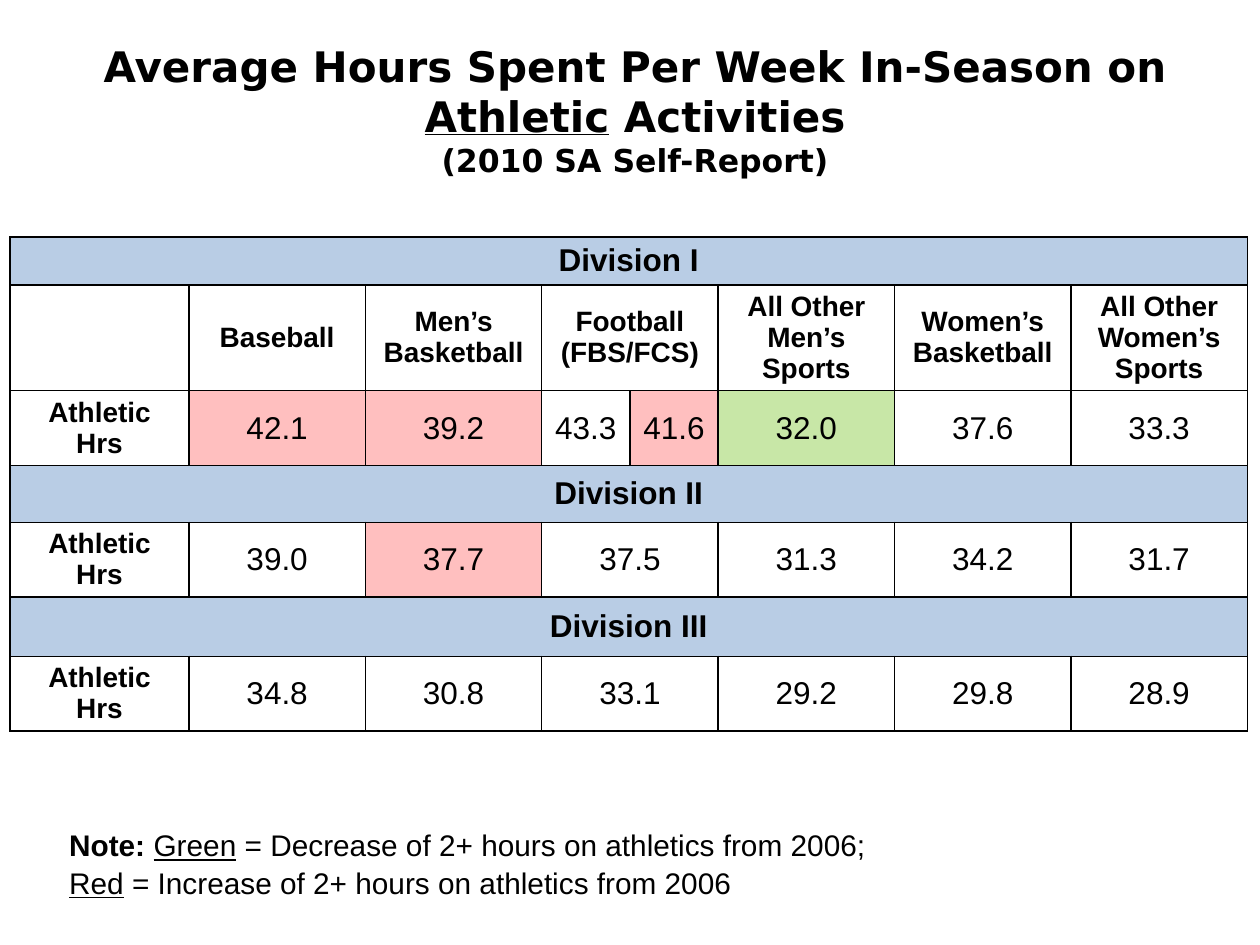
from dataclasses import dataclass

from lxml import etree
from pptx import Presentation
from pptx.dml.color import RGBColor
from pptx.enum.text import MSO_ANCHOR, MSO_AUTO_SIZE, PP_ALIGN
from pptx.oxml.ns import qn
from pptx.util import Inches, Pt

CENTER = PP_ALIGN.CENTER
LEFT = PP_ALIGN.LEFT
MIDDLE = MSO_ANCHOR.MIDDLE
TOP = MSO_ANCHOR.TOP
NO_AUTOSIZE = MSO_AUTO_SIZE.NONE


@dataclass(frozen=True)
class Theme:
    title_font: str = "DejaVu Sans"
    body_font: str = "Arial"
    ink: str = "000000"
    paper: str = "FFFFFF"
    band: str = "B9CDE5"
    increase: str = "FF0000"
    decrease: str = "92D050"
    title_size: int = 24
    value_size: int = 18
    label_size: int = 16
    note_size: int = 17
    border: int = 1


THEME = Theme()
FILLS = {
    "plain": (THEME.paper, 100),
    "band": (THEME.band, 100),
    "red": (THEME.increase, 25),
    "green": (THEME.decrease, 50),
}

TITLE = [[
    ("Average Hours Spent Per Week In-Season on\v", {}),
    ("Athletic", {"underline": True}),
    (" Activities\v", {}),
    ("(2010 SA Self-Report)", {"size": Pt(THEME.value_size)}),
]]
NOTE = [
    [
        ("Note: ", {"bold": True}),
        ("Green", {"underline": True}),
        (" = Decrease of 2+ hours on athletics from 2006;", {}),
    ],
    [
        ("Red", {"underline": True}),
        (" = Increase of 2+ hours on athletics from 2006", {}),
    ],
]

SPORTS = ["", "Baseball", "Men’s Basketball", "Football\n(FBS/FCS)",
          "All Other Men’s Sports", "Women’s Basketball", "All Other Women’s Sports"]
HOURS_LABEL = "Athletic Hrs"
DIVISIONS = [
    ("Division I", ["42.1", "39.2", "43.3", "41.6", "32.0", "37.6", "33.3"]),
    ("Division II", ["39.0", "37.7", "37.5", None, "31.3", "34.2", "31.7"]),
    ("Division III", ["34.8", "30.8", "33.1", None, "29.2", "29.8", "28.9"]),
]
CHANGES = {
    ("Division I", "42.1"): "red",
    ("Division I", "39.2"): "red",
    ("Division I", "41.6"): "red",
    ("Division I", "32.0"): "green",
    ("Division II", "37.7"): "red",
}

SPORT_WIDTH = 1.4
FOOTBALL = 3
COLUMN_WIDTHS = [1.42, SPORT_WIDTH, SPORT_WIDTH, SPORT_WIDTH / 2, SPORT_WIDTH / 2,
                 SPORT_WIDTH, SPORT_WIDTH, SPORT_WIDTH]
ROW_HEIGHTS = [0.38, 0.84, 0.59, 0.45, 0.59, 0.47, 0.59]


def add_text(page, area, paragraphs, font, size, bold, align, anchor, wrap, spacing):
    box = page.shapes.add_textbox(*map(Inches, area))
    frame = box.text_frame
    frame.word_wrap = wrap
    frame.auto_size = NO_AUTOSIZE
    frame.vertical_anchor = anchor
    for index, spans in enumerate(paragraphs):
        para = frame.add_paragraph() if index else frame.paragraphs[0]
        para.alignment = align
        para.line_spacing = spacing
        for text, changes in spans:
            pieces = text.split("\v")
            for number, piece in enumerate(pieces):
                if number:
                    para.add_line_break()
                if piece:
                    span = para.add_run()
                    span.text = piece
                    style = {"name": font, "size": Pt(size), "bold": bold, **changes}
                    for key, value in style.items():
                        setattr(span.font, key, value)
                    span.font.color.rgb = RGBColor.from_string(THEME.ink)


def add_borders(cell):
    properties = cell._tc.get_or_add_tcPr()
    for index, side in enumerate(("lnL", "lnR", "lnT", "lnB")):
        line = etree.Element(qn(f"a:{side}"), w=str(Pt(THEME.border)))
        fill = etree.SubElement(line, qn("a:solidFill"))
        etree.SubElement(fill, qn("a:srgbClr"), val=THEME.ink)
        properties.insert(index, line)


def style_cell(cell, fill):
    color, opacity = FILLS[fill]
    cell.vertical_anchor = MIDDLE
    cell.fill.solid()
    cell.fill.fore_color.rgb = RGBColor.from_string(color)
    if opacity < 100:
        tint = cell._tc.tcPr.find(".//" + qn("a:srgbClr"))
        etree.SubElement(tint, qn("a:alpha"), val=str(opacity * 1000))
    add_borders(cell)


def write_cell(cell, text, size, bold):
    cell.text = text
    for para in cell.text_frame.paragraphs:
        para.alignment = CENTER
        para.font.name = THEME.body_font
        para.font.size = Pt(size)
        para.font.bold = bold
        para.font.color.rgb = RGBColor.from_string(THEME.ink)


def table_rows():
    header = SPORTS[:FOOTBALL + 1] + [None] + SPORTS[FOOTBALL + 1:]
    rows = []
    for division, hours in DIVISIONS:
        rows.append(("band", division, [division] + [None] * len(hours)))
        if len(rows) == 1:
            rows.append(("header", division, header))
        rows.append(("hours", division, [HOURS_LABEL] + hours))
    return rows


def add_hours_table(page):
    area = (0.08, 1.88, sum(COLUMN_WIDTHS), sum(ROW_HEIGHTS))
    table = page.shapes.add_table(
        len(ROW_HEIGHTS), len(COLUMN_WIDTHS), *map(Inches, area)).table
    table.horz_banding = False
    table.first_row = False
    for column, width in zip(table.columns, COLUMN_WIDTHS):
        column.width = Inches(width)
    for row, height in zip(table.rows, ROW_HEIGHTS):
        row.height = Inches(height)
    for row_index, (kind, division, texts) in enumerate(table_rows()):
        for column_index, text in enumerate(texts):
            cell = table.cell(row_index, column_index)
            fill = "band" if kind == "band" else CHANGES.get((division, text), "plain")
            style_cell(cell, fill)
            if text is None:
                continue
            label = kind == "header" or (kind == "hours" and column_index == 0)
            size = THEME.label_size if label else THEME.value_size
            write_cell(cell, text, size, label or kind == "band")
            end = column_index
            while end + 1 < len(texts) and texts[end + 1] is None:
                end += 1
            if end > column_index:
                cell.merge(table.cell(row_index, end))


def main():
    deck = Presentation()
    deck.slide_width = Inches(10)
    deck.slide_height = Inches(7.5)
    page = deck.slides.add_slide(deck.slide_layouts[6])
    add_text(page, (0.08, 0.58, 9.92, 0.58), TITLE, THEME.title_font,
             THEME.title_size, True, CENTER, MIDDLE, True, 1.0)
    add_hours_table(page)
    add_text(page, (0.45, 6.5, 6.66, 0.67), NOTE, THEME.body_font,
             THEME.note_size, False, LEFT, TOP, False, 1.05)
    deck.save("out.pptx")


if __name__ == "__main__":
    main()
